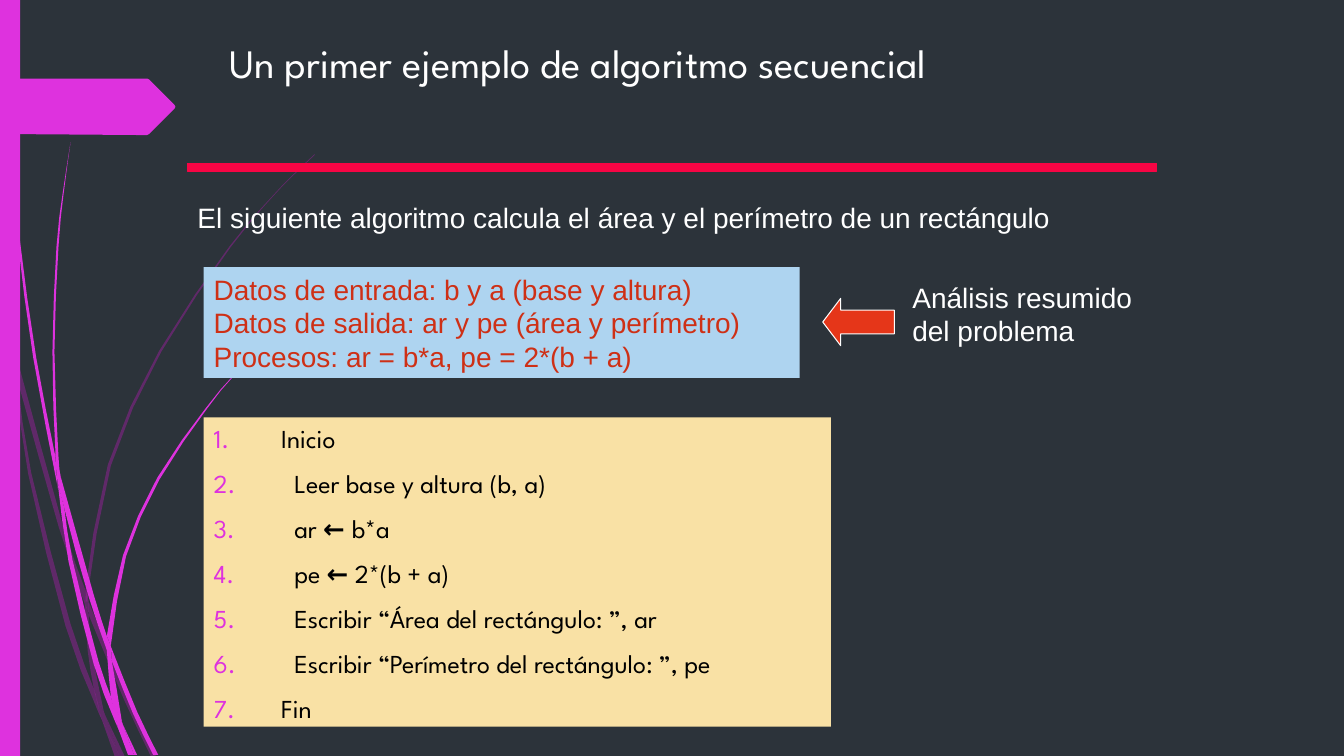
import dataclasses

import pptx
import pptx.dml.color
import pptx.enum.shapes
import pptx.enum.text
import pptx.oxml.ns
import pptx.util
from lxml import etree

Inches = pptx.util.Inches
FORMS = pptx.enum.shapes.MSO_SHAPE


@dataclasses.dataclass(frozen=True)
class Theme:
    """Colours, fonts and type sizes of the slide."""
    back: str = "2C333A"
    pink: str = "DE32DE"
    plum: str = "B01CB0"
    rule: str = "F70544"
    sand: str = "F9E1A5"
    sky: str = "AED4F0"
    rust: str = "CE3016"
    red: str = "E53619"
    white: str = "FFFFFF"
    black: str = "000000"
    head: str = "League Spartan"
    plain: str = "Arial"
    title: float = 28.8
    tail: float = 32.4
    step: float = 18.5
    note: float = 20


THEME = Theme()

FAINT = [
    ([(0.11, 3.5), (0.09, 3.22), (0, 2.82)], [(0, 2.99), (0.1, 3.44), (0.11, 3.5)]),
    ([(0.84, 5.99), (0.58, 5.22), (0.17, 3.76)], [(0.14, 3.45), (0.62, 5.2), (0.85, 5.86)]),
    ([(1.5, 7.51), (1.23, 6.94), (0.88, 6.1)],
     [(0.88, 5.96), (0.92, 6.07), (1.27, 6.92), (1.55, 7.51)]),
    ([(1.19, 7.51), (1.05, 7.11)], [(1.05, 7.11), (1.24, 7.51)]),
    ([(1.01, 7.14), (0.92, 6.93), (0.65, 6.21), (0.28, 4.7), (0.11, 3.5)],
     [(0.17, 3.76), (0.31, 4.69), (0.7, 6.19), (0.93, 6.83), (0.99, 7.07), (1.01, 7.14)]),
    ([(0.84, 5.99), (0.87, 6.46), (0.93, 6.83), (0.96, 6.92), (1.05, 7.11)],
     [(1.03, 7.06), (0.91, 6.46), (0.88, 6.1), (0.84, 5.99)]),
    ([(0.88, 5.96), (0.88, 5.84), (1.1, 4.62), (1.6, 3.49), (2.29, 2.45), (2.68, 1.98),
      (2.9, 1.75), (3.12, 1.54)],
     [(3.12, 1.53), (2.89, 1.75), (2.68, 1.97), (2.28, 2.44), (1.58, 3.48), (1.07, 4.61),
      (0.85, 5.84), (0.88, 5.96)]),
    ([(1.01, 7.14), (1.14, 7.51)], [(1.19, 7.51), (1.01, 7.14)]),
    ([(0.88, 6.1), (0.88, 5.96), (0.85, 5.86)], [(0.84, 5.99), (0.88, 6.08)]),
    ([(1.05, 7.11), (0.96, 6.92), (0.93, 6.83)],
     [(0.99, 7.07), (1.01, 7.14), (1.19, 7.51)]),
]
BRIGHT = [
    ([(0.03, 0), (0.04, 0.48), (0.07, 1.1), (0.17, 2.33), (0.33, 3.55), (0.56, 4.77),
      (0.57, 4.81)],
     [(0.55, 4.53), (0.36, 3.55), (0.19, 2.32), (0.08, 1.09), (0.05, 0.48), (0.04, 0)]),
    ([(1.06, 6.45), (0.88, 5.92), (0.64, 5.05), (0.6, 4.72)],
     [(0.6, 4.72), (0.93, 5.9), (1.06, 6.31)]),
    ([(1.52, 7.49), (1.32, 7.08), (1.11, 6.56)],
     [(1.1, 6.41), (1.13, 6.49), (1.36, 7.06), (1.57, 7.49)]),
    ([(1.17, 7.22), (1.11, 7.08), (0.93, 6.59), (0.68, 5.57), (0.57, 4.77)],
     [(0.64, 5.05), (0.72, 5.56), (0.98, 6.57), (1.1, 6.91), (1.17, 7.22)]),
    ([(0.6, 4.72), (0.58, 4.53), (0.54, 3.49), (0.58, 2.45), (0.63, 1.93), (0.7, 1.41)],
     [(0.7, 1.41), (0.62, 1.93), (0.56, 2.45), (0.52, 3.49), (0.55, 4.49), (0.6, 4.72)]),
    ([(1.33, 7.49), (1.22, 7.19)], [(1.22, 7.19), (1.36, 7.49)]),
    ([(0.64, 5.05), (0.6, 4.72), (0.55, 4.49)], [(0.55, 4.53), (0.57, 4.77), (0.64, 5.05)]),
    ([(1.1, 6.41), (1.11, 6.33), (1.25, 5.52), (1.58, 4.76), (2.05, 4.06), (2.31, 3.74),
      (2.61, 3.44)],
     [(2.6, 3.44), (2.31, 3.73), (2.04, 4.05), (1.56, 4.74), (1.22, 5.51), (1.06, 6.31)]),
    ([(1.17, 7.22), (1.27, 7.49)], [(1.31, 7.49), (1.17, 7.22)]),
    ([(1.06, 6.45), (1.1, 6.91), (1.16, 7.06), (1.22, 7.19)],
     [(1.21, 7.16), (1.11, 6.56), (1.06, 6.45)]),
    ([(1.06, 6.45), (1.11, 6.56)], [(1.1, 6.41), (1.06, 6.31)]),
    ([(1.1, 6.91), (1.17, 7.22), (1.3, 7.49)], [(1.33, 7.49), (1.22, 7.19), (1.1, 6.91)]),
]
TAG = [(0, 0.78), (1.46, 0.78), (1.48, 0.79), (1.73, 1.04), (1.74, 1.06), (1.73, 1.08),
       (1.48, 1.33), (1.46, 1.34), (1.36, 1.34), (0, 1.33)]
STEPS = [
    ["Inicio"], ["Leer base y altura (b, a)"], ["ar ", "← ", "b*a"],
    ["pe ", "←", " 2*(b + a)"], ["Escribir “Área del rectángulo: ”, ar"],
    ["Escribir “Perímetro del rectángulo: ”, pe"], ["Fin"],
]
FACTS = [
    ["Datos de entrada: b y a (base y altura)"],
    ["Datos de salida: ar y pe (área y perímetro)"],
    ["Procesos: ar = b*a, pe = 2*(b + a)"],
]


def tint(code):
    """Turn a hex code into a colour."""
    return pptx.dml.color.RGBColor.from_string(code)


def apply(item, values):
    """Set each named value on an item."""
    for name, value in values.items():
        setattr(item, name, value)


def paint(shape, fill, line=None):
    """Give a shape its fill and line, and no shadow."""
    shape.shadow.inherit = False
    shape.fill.solid()
    shape.fill.fore_color.rgb = tint(fill)
    if line:
        shape.line.color.rgb = tint(line)
        shape.line.width = pptx.util.Pt(0.75)
    else:
        shape.line.fill.background()


def smooth(edge):
    """Add a softly bowed midpoint to each inner stretch of an edge."""
    if len(edge) < 3:
        return edge
    before, after = (tuple(2 * a - b for a, b in zip(*pair))
                     for pair in (edge[:2], edge[:-3:-1]))
    ends = [before, *edge, after]
    curve = []
    for group in zip(ends, ends[1:], ends[2:], ends[3:]):
        curve += [group[1], tuple((9 * (q + r) - p - s) / 16 for p, q, r, s in zip(*group))]
    return curve + [edge[-1]]


def outline(slide, points, fill, alpha=None):
    """Draw a closed outline, see-through if asked."""
    spots = [(Inches(x), Inches(y)) for x, y in dict.fromkeys(points)]
    maker = slide.shapes.build_freeform(*spots[0])
    maker.add_line_segments(spots[1:], close=True)
    shape = maker.convert_to_shape()
    paint(shape, fill)
    if alpha:
        node = next(shape.element.iter(pptx.oxml.ns.qn("a:srgbClr")))
        etree.SubElement(node, pptx.oxml.ns.qn("a:alpha"), val=str(alpha * 1000))


def block(slide, place, fill, line=None, form=FORMS.RECTANGLE):
    """Add a filled preset shape."""
    shape = slide.shapes.add_shape(form, *map(Inches, place))
    paint(shape, fill, line)
    return shape


def label(slide, place, rows, **look):
    """Add a text box with its words."""
    box = slide.shapes.add_textbox(*map(Inches, place))
    write(box, rows, **look)
    return box


def write(shape, rows, font, size, color):
    """Fill a shape with rows of runs, with arrows in bold."""
    frame = shape.text_frame
    apply(frame, {"word_wrap": True, "vertical_anchor": pptx.enum.text.MSO_ANCHOR.TOP})
    for spot, runs in enumerate(rows):
        row = frame.add_paragraph() if spot else frame.paragraphs[0]
        row.alignment = pptx.enum.text.PP_ALIGN.LEFT
        for text in runs:
            run = row.add_run()
            run.text = text
            apply(run.font, {"name": font, "size": pptx.util.Pt(size),
                             "bold": text.strip() == "←"})
            run.font.color.rgb = tint(color)


def number(shape, color):
    """Number the rows, with inner steps set further in."""
    rows = shape.text_frame.paragraphs
    for spot, row in enumerate(rows):
        indent = Inches(0.67 if spot in (0, len(rows) - 1) else 0.8)
        row.space_before = pptx.util.Pt(10)
        props = row._p.get_or_add_pPr()
        props.set("marL", str(indent))
        props.set("indent", str(-indent))
        shade = etree.SubElement(props, pptx.oxml.ns.qn("a:buClr"))
        etree.SubElement(shade, pptx.oxml.ns.qn("a:srgbClr"), val=color)
        etree.SubElement(props, pptx.oxml.ns.qn("a:buAutoNum"), type="arabicPeriod")


def main():
    """Build and save the slide."""
    deck = pptx.Presentation()
    apply(deck, {"slide_width": Inches(13.33), "slide_height": Inches(7.5)})
    slide = deck.slides.add_slide(deck.slide_layouts[6])
    slide.background.fill.solid()
    slide.background.fill.fore_color.rgb = tint(THEME.back)

    for wisps, fill, alpha in ((FAINT, THEME.plum, 40), (BRIGHT, THEME.pink, None)):
        for first, last in wisps:
            outline(slide, smooth(first) + smooth(last), fill, alpha)
    block(slide, (0, 0, 0.2, 7.5), THEME.pink)
    outline(slide, TAG, THEME.pink)

    note = {"font": THEME.plain, "size": THEME.note, "color": THEME.white}
    title = label(slide, (2.18, 0.28, 9.06, 1.18),
                  [["Un primer ejemplo de algoritmo secuencial", " "]],
                  font=THEME.head, size=THEME.title, color=THEME.white)
    title.text_frame.paragraphs[0].runs[1].font.size = pptx.util.Pt(THEME.tail)
    block(slide, (1.86, 1.62, 9.61, 0.08), THEME.rule, THEME.rule)
    label(slide, (1.86, 1.94, 9.61, 0.43),
          [["El siguiente algoritmo calcula el área y el perímetro de un rectángulo"]], **note)
    steps = block(slide, (2.02, 4.14, 6.22, 3.07), THEME.sand)
    write(steps, STEPS, THEME.head, THEME.step, THEME.black)
    number(steps, THEME.pink)
    facts = block(slide, (2.02, 2.65, 5.91, 1.1), THEME.sky)
    write(facts, FACTS, THEME.plain, THEME.note, THEME.rust)
    label(slide, (8.95, 2.73, 2.52, 0.77), [["Análisis resumido del problema"]], **note)
    arrow = block(slide, (8.16, 2.96, 0.71, 0.47), THEME.red, THEME.white, FORMS.LEFT_ARROW)
    arrow.adjustments[1] = 0.38
    deck.save("out.pptx")


if __name__ == "__main__":
    main()
